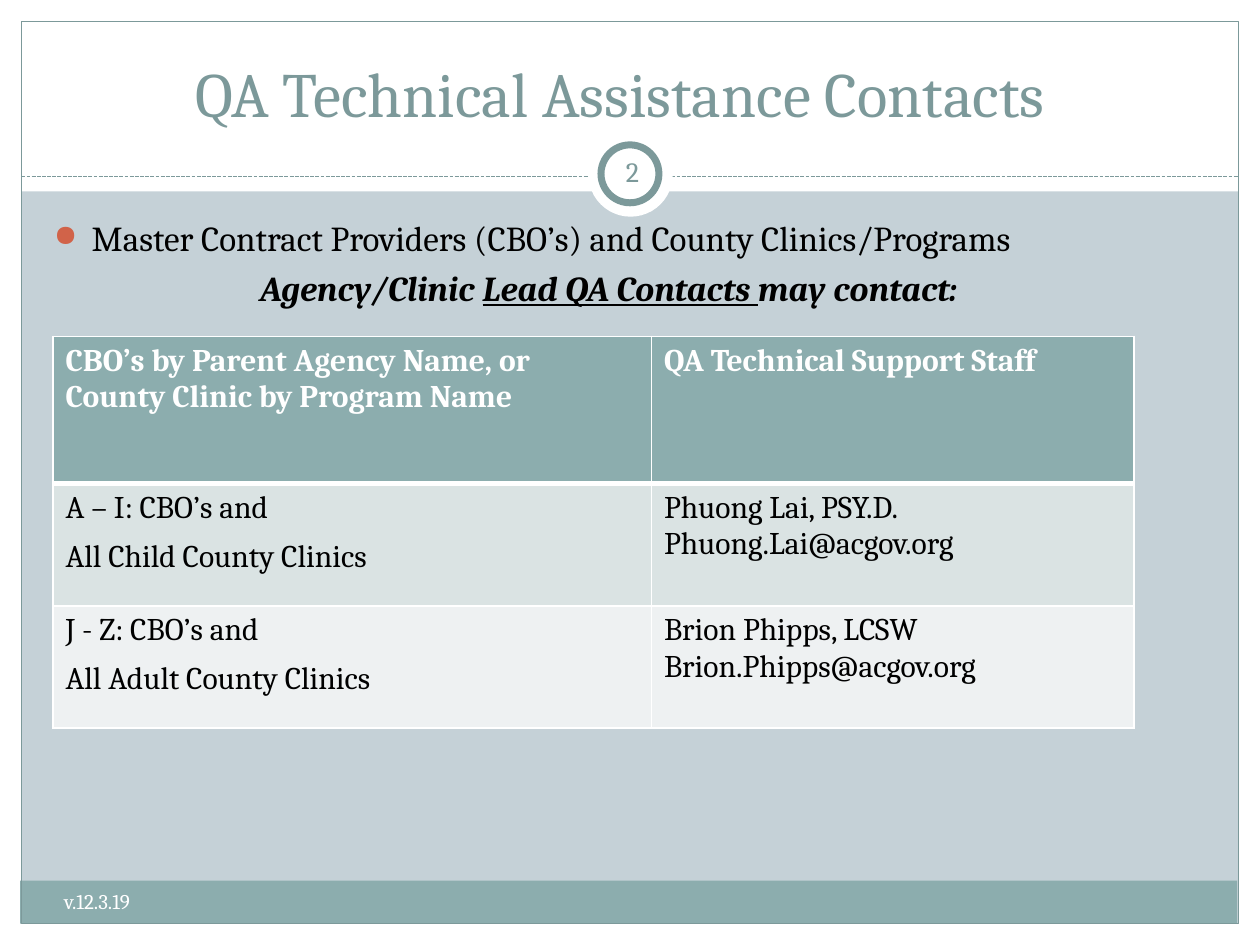
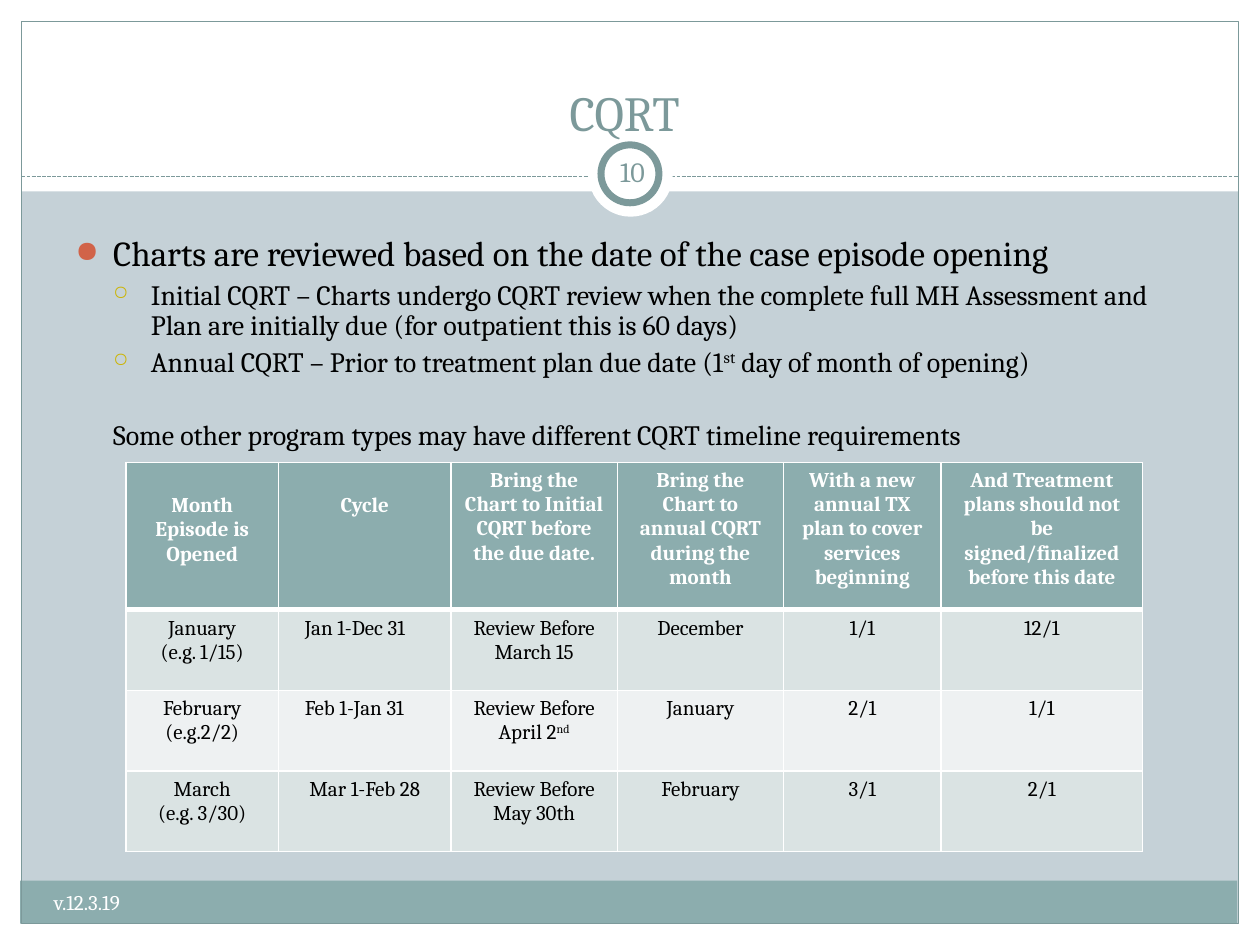
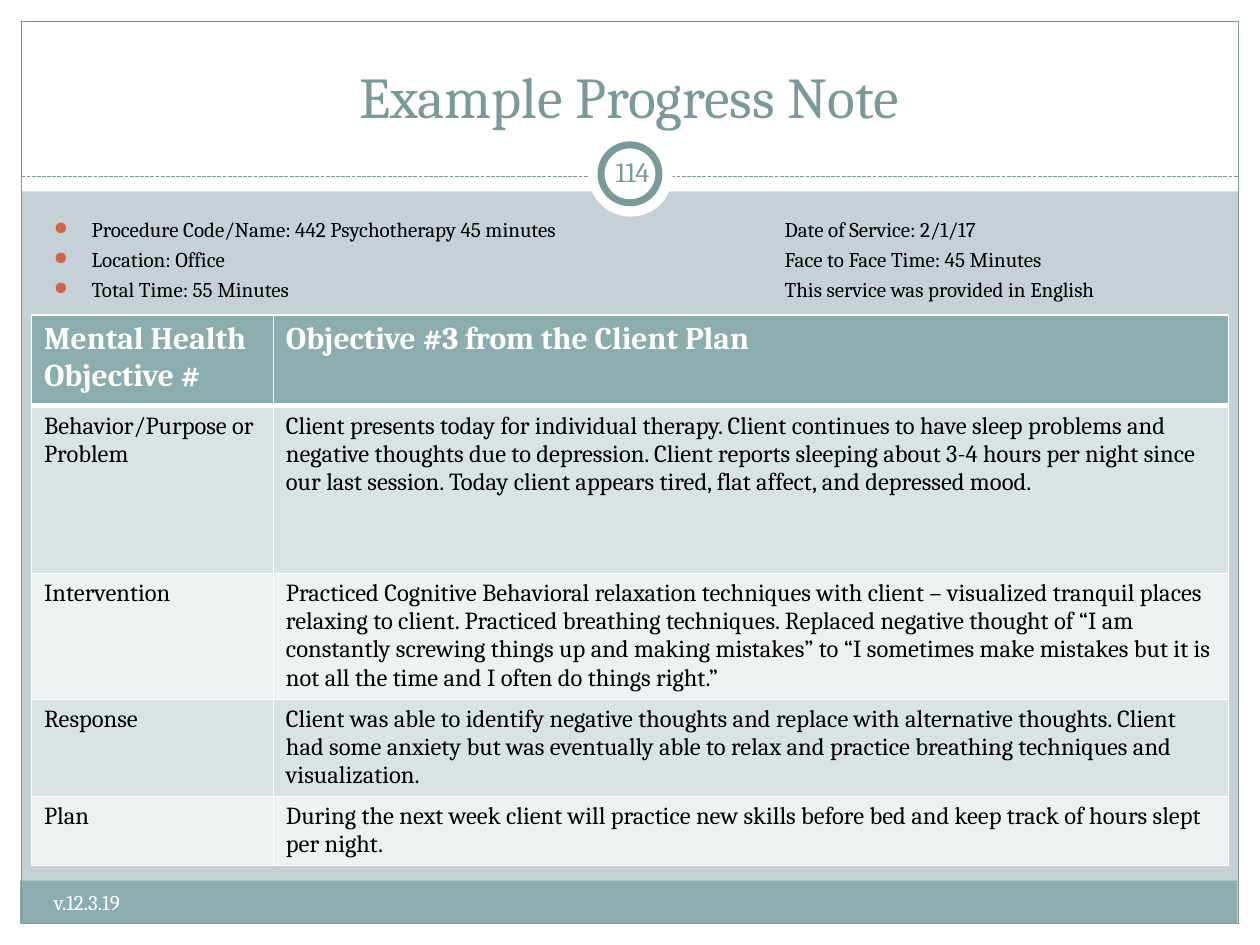
"""Build three slides of a quality assurance training presentation."""
from dataclasses import dataclass

from lxml import etree
from pptx import Presentation
from pptx.dml.color import RGBColor
from pptx.enum.dml import MSO_LINE
from pptx.enum.shapes import MSO_CONNECTOR, MSO_SHAPE
from pptx.enum.text import MSO_ANCHOR, MSO_AUTO_SIZE, PP_ALIGN
from pptx.oxml.ns import qn
from pptx.util import Inches, Pt

RECTANGLE, OVAL = MSO_SHAPE.RECTANGLE, MSO_SHAPE.OVAL
STRAIGHT, DASHED = MSO_CONNECTOR.STRAIGHT, MSO_LINE.SQUARE_DOT
LEFT, CENTER = PP_ALIGN.LEFT, PP_ALIGN.CENTER
TOP, MIDDLE, BOTTOM = MSO_ANCHOR.TOP, MSO_ANCHOR.MIDDLE, MSO_ANCHOR.BOTTOM
NO_AUTOFIT = MSO_AUTO_SIZE.NONE
FONT = "Cambria"
SPACE_RATIO = 0.23
TITLE_ONLY = 5
COLORS = {
    "background": "C5D1D7",
    "white": "FFFFFF",
    "black": "000000",
    "band": "8CADAE",
    "accent": "7C999A",
    "odd_row": "DAE3E3",
    "even_row": "EEF1F2",
    "bullet": "D16349",
    "sub_bullet": "CCB400",
}


@dataclass(frozen=True)
class Box:
    """A position and size in inches."""

    left: float
    top: float
    width: float
    height: float

    def lengths(self) -> tuple:
        """Return the four measures as lengths."""
        return tuple(Inches(v) for v in (self.left, self.top, self.width, self.height))


@dataclass(frozen=True)
class FramePart:
    """A preset shape of the shared frame."""

    box: Box
    kind: int = RECTANGLE
    fill: str = ""
    line_width: float = 0


@dataclass(frozen=True)
class Run:
    """A piece of text with its own formatting."""

    text: str
    emphasis: bool = False
    underline: bool = False
    superscript: bool = False


@dataclass(frozen=True)
class Bullet:
    """A bullet character with colour, size and indent."""

    character: str
    color: str
    percent: int
    margin: float


@dataclass(frozen=True)
class Paragraph:
    """A paragraph made of runs."""

    runs: tuple[Run, ...]
    size: float
    align: int = LEFT
    bullet: Bullet | None = None
    margin: float = 0
    space_before: float = 0
    line_spacing: float = 1.0
    tab: float = 0


@dataclass(frozen=True)
class Cell:
    """The paragraphs of a table cell and its top margin."""

    paragraphs: tuple[Paragraph, ...]
    top_margin: float = 0.05


@dataclass(frozen=True)
class TableData:
    """A table with its measures in inches."""

    box: Box
    columns: tuple[float, ...]
    rows: tuple[float, ...]
    cells: tuple[tuple[Cell, ...], ...]


@dataclass(frozen=True)
class SlideData:
    """Everything that differs from slide to slide."""

    title: str
    title_size: float
    title_box: Box
    number: str
    body_box: Box
    body: tuple[Paragraph, ...]
    table: TableData
    footer_box: Box = Box(0.33, 7.01, 3.92, 0.4)


FOOTER = "v.12.3.19"
NUMBER_BOX = Box(4.77, 1.12, 0.5, 0.48)
DIVIDER = (0.17, 1.4, 9.83, 1.4)
FRAME_BACK = (
    FramePart(Box(0, 7.33, 10, 0.17), fill="white"),
    FramePart(Box(0, 0, 10, 1.52), fill="white"),
    FramePart(Box(0, 0, 0.17, 7.5), fill="white"),
    FramePart(Box(9.83, 0, 0.17, 7.5), fill="white"),
    FramePart(Box(0.16, 6.99, 9.66, 0.34), fill="band"),
    FramePart(Box(0.17, 0.17, 9.66, 7.16), line_width=0.75),
)
NUMBER_BADGE = (
    FramePart(Box(4.67, 1.05, 0.67, 0.67), OVAL, "white"),
    FramePart(Box(4.77, 1.15, 0.46, 0.46), OVAL, "white", 4),
)
MAIN_BULLET = Bullet("●", "bullet", 85, 0.3)
SUB_BULLET = Bullet("○", "sub_bullet", 70, 0.6)


def body_line(*runs: Run, size: float, bullet: Bullet | None = MAIN_BULLET, **options) -> Paragraph:
    """Describe a body paragraph with spacing in proportion to its size."""
    settings = {"space_before": round(size * SPACE_RATIO, 1), **options}
    return Paragraph(runs, size, bullet=bullet, **settings)


def cell(*lines: str, size: float, align: int = LEFT, gap: float = 0,
         margin: float = 0, top_margin: float = 0.05) -> Cell:
    """Describe a cell with one plain paragraph for each line."""
    return Cell(tuple(
        Paragraph((Run(line),), size, align, margin=margin, space_before=gap if index else 0)
        for index, line in enumerate(lines)
    ), top_margin)


def centered(*lines: str, **options) -> Cell:
    """Describe a centred cell of the review schedule."""
    return cell(*lines, size=12, align=CENTER, **options)


def schedule_row(month: str, example: str, cycle: Cell, review: Cell, *dates: str) -> tuple[Cell, ...]:
    """Describe one month of the review schedule."""
    return (centered(month, example), cycle, review, *(centered(date) for date in dates))


def note_row(label: str, text: str, size: float = 14) -> tuple[Cell, ...]:
    """Describe one row of the progress note."""
    return cell(label, size=size), cell(text, size=size)


CONTACTS = TableData(
    Box(0.42, 2.67, 8.58, 3.11), (4.75, 3.83), (1.17, 0.97, 0.97),
    (
        (cell("CBO’s by Parent Agency Name, or", "County Clinic by Program Name", size=18),
         cell("QA Technical Support Staff", size=18)),
        (cell("A – I: CBO’s and", "All Child County Clinics", size=18, gap=7),
         cell("Phuong Lai, PSY.D.", "Phuong.Lai@acgov.org", size=18)),
        (cell("J - Z: CBO’s and", "All Adult County Clinics", size=18, gap=7),
         cell("Brion Phipps, LCSW", "Brion.Phipps@acgov.org", size=18)),
    ),
)
SCHEDULE = TableData(
    Box(1, 3.67, 8.07, 3.09), (1.21, 1.37, 1.32, 1.32, 1.25, 1.6), (1.17, 0.64, 0.64, 0.64),
    (
        (centered("Month Episode is Opened", top_margin=0.25),
         centered("Cycle", top_margin=0.25),
         centered("Bring the Chart to Initial CQRT before the due date."),
         centered("Bring the Chart to annual CQRT during the month"),
         centered("With a new annual TX plan to cover services beginning"),
         centered("And Treatment plans should not be signed/finalized before this date")),
        schedule_row("January", "(e.g. 1/15)", cell("Jan 1-Dec 31", size=12, margin=0.11),
                     centered("Review Before March 15"), "December", "1/1", "12/1"),
        schedule_row("February", "(e.g.2/2)", cell("Feb 1-Jan 31", size=12, margin=0.11),
                     Cell((Paragraph((Run("Review Before April 2"), Run("nd", superscript=True)),
                                     12, CENTER),)),
                     "January", "2/1", "1/1"),
        schedule_row("March", "(e.g. 3/30)", centered("Mar 1-Feb 28"),
                     centered("Review Before May 30th"), "February", "3/1", "2/1"),
    ),
)
PROGRESS_NOTE = TableData(
    Box(0.25, 2.5, 9.5, 4.36), (1.92, 7.58), (0.72, 1.33, 1, 0.77, 0.54),
    (
        note_row("Mental Health Objective #", "Objective #3 from the Client Plan", 18),
        note_row("Behavior/Purpose or Problem",
                 "Client presents today for individual therapy. Client continues to have sleep "
                 "problems and negative thoughts due to depression. Client reports sleeping about "
                 "3-4 hours per night since our last session. Today client appears tired, flat "
                 "affect, and depressed mood."),
        note_row("Intervention",
                 "Practiced Cognitive Behavioral relaxation techniques with client – visualized "
                 "tranquil places relaxing to client. Practiced breathing techniques. Replaced "
                 "negative thought of “I am constantly screwing things up and making mistakes” to "
                 "“I sometimes make mistakes but it is not all the time and I often do things right.”"),
        note_row("Response",
                 "Client was able to identify negative thoughts and replace with alternative "
                 "thoughts. Client had some anxiety but was eventually able to relax and practice "
                 "breathing techniques and visualization."),
        note_row("Plan",
                 "During the next week client will practice new skills before bed and keep track "
                 "of hours slept per night."),
    ),
)
SERVICE_DETAILS = (
    ("Procedure Code/Name: 442 Psychotherapy 45 minutes", "Date of Service: 2/1/17"),
    ("Location: Office", "Face to Face Time: 45 Minutes"),
    ("Total Time: 55 Minutes", "This service was provided in English"),
)
SLIDES = (
    SlideData(
        "QA Technical Assistance Contacts", 36, Box(0.42, 0.33, 9, 0.75), "2",
        Box(0.33, 1.67, 9, 5.17),
        (
            body_line(Run("Master Contract Providers (CBO’s) and County Clinics/Programs"), size=20),
            body_line(Run("Agency/Clinic ", True), Run("Lead QA Contacts ", True, True),
                      Run("may contact:", True), size=20, bullet=None, align=CENTER),
        ),
        CONTACTS, Box(0.41, 7, 3.92, 0.4),
    ),
    SlideData(
        "CQRT ", 28, Box(0.5, 0.25, 9, 0.92), "10", Box(0.5, 1.83, 9, 5),
        (
            body_line(Run("Charts are reviewed based on the date of the case episode opening"),
                      size=20, line_spacing=0.9),
            body_line(Run("Initial CQRT – Charts undergo CQRT review when the complete full MH "
                          "Assessment and Plan are initially due (for outpatient this is 60 days)"),
                      size=16, bullet=SUB_BULLET, line_spacing=0.9),
            body_line(Run("Annual CQRT – Prior to treatment plan due date (1"),
                      Run("st", superscript=True), Run(" day of month of opening)"),
                      size=16, bullet=SUB_BULLET, line_spacing=0.9),
            body_line(Run("Some other program types may have different CQRT timeline requirements"),
                      size=16, bullet=None, margin=0.3, space_before=24.5, line_spacing=0.9),
        ),
        SCHEDULE,
    ),
    SlideData(
        "Example Progress Note", 33, Box(0.33, 0.25, 9.33, 0.83), "114", Box(0.33, 1.67, 9.3, 5),
        tuple(body_line(Run(f"{left}\t{right}"), size=12, tab=5.8)
              for left, right in SERVICE_DETAILS),
        PROGRESS_NOTE,
    ),
)


def color(name: str) -> RGBColor:
    """Return a colour of the palette."""
    return RGBColor.from_string(COLORS[name])


def add_element(parent, tag: str, **attributes):
    """Append a drawing element with attributes."""
    return etree.SubElement(parent, qn(tag), {key: str(value) for key, value in attributes.items()})


def write_paragraph(paragraph, data: Paragraph, color_name: str, bold: bool = False) -> None:
    """Write and format a paragraph run by run."""
    paragraph.alignment = data.align
    paragraph.line_spacing = data.line_spacing
    paragraph.space_before = Pt(data.space_before)
    properties = paragraph._p.get_or_add_pPr()
    margin = data.bullet.margin if data.bullet else data.margin
    properties.set("marL", str(Inches(margin)))
    properties.set("indent", str(Inches(-0.3 if data.bullet else 0)))
    if data.bullet:
        bullet_color = add_element(properties, "a:buClr")
        add_element(bullet_color, "a:srgbClr", val=COLORS[data.bullet.color])
        add_element(properties, "a:buSzPct", val=data.bullet.percent * 1000)
        add_element(properties, "a:buChar", char=data.bullet.character)
    else:
        add_element(properties, "a:buNone")
    if data.tab:
        add_element(add_element(properties, "a:tabLst"), "a:tab", pos=Inches(data.tab), algn="l")
    for item in data.runs:
        run = paragraph.add_run()
        run.text = item.text
        run.font.name = FONT
        run.font.size = Pt(data.size)
        run.font.color.rgb = color(color_name)
        run.font.bold = bold or item.emphasis
        run.font.italic = item.emphasis
        run.font.underline = item.underline
        if item.superscript:
            run._r.get_or_add_rPr().set("baseline", "30000")


def write_text(frame, paragraphs: tuple[Paragraph, ...], color_name: str, bold: bool = False) -> None:
    """Fill a text frame with paragraphs."""
    for index, data in enumerate(paragraphs):
        paragraph = frame.add_paragraph() if index else frame.paragraphs[0]
        write_paragraph(paragraph, data, color_name, bold)


def format_frame(frame, anchor: int, side_inset: float = 0.1) -> None:
    """Set wrapping, anchor and insets of a text frame."""
    frame.word_wrap = True
    frame.auto_size = NO_AUTOFIT
    frame.vertical_anchor = anchor
    frame.margin_left = frame.margin_right = Inches(side_inset)
    frame.margin_top = frame.margin_bottom = Inches(0.05)


def add_text(slide, box: Box, paragraphs: tuple[Paragraph, ...], color_name: str,
             anchor: int = TOP, side_inset: float = 0.1) -> None:
    """Add a text box."""
    frame = slide.shapes.add_textbox(*box.lengths()).text_frame
    format_frame(frame, anchor, side_inset)
    write_text(frame, paragraphs, color_name)


def add_frame_part(slide, part: FramePart):
    """Add one shape of the shared frame."""
    shape = slide.shapes.add_shape(part.kind, *part.box.lengths())
    shape.shadow.inherit = False
    if part.fill:
        shape.fill.solid()
        shape.fill.fore_color.rgb = color(part.fill)
    else:
        shape.fill.background()
    if part.line_width:
        shape.line.color.rgb = color("accent")
        shape.line.width = Pt(part.line_width)
    else:
        shape.line.fill.background()
    return shape


def add_divider(slide):
    """Add the dashed line below the title."""
    divider = slide.shapes.add_connector(STRAIGHT, *(Inches(value) for value in DIVIDER))
    divider.line.color.rgb = color("accent")
    divider.line.width = Pt(0.75)
    divider.line.dash_style = DASHED
    add_element(divider.element.spPr, "a:effectLst")
    return divider


def move_frame_to_layout(slide, layout) -> None:
    """Draw the shared frame and place it on the layout."""
    layout.background.fill.solid()
    layout.background.fill.fore_color.rgb = color("background")
    parts = [add_frame_part(slide, part) for part in FRAME_BACK]
    parts.append(add_divider(slide))
    parts.extend(add_frame_part(slide, part) for part in NUMBER_BADGE)
    for part in parts:
        layout.shapes.element.append(part.element)


def add_borders(table_cell, row: int) -> None:
    """Give a cell white borders, thicker below the header."""
    properties = table_cell._tc.get_or_add_tcPr()
    widths = {"L": 1, "R": 1, "T": 3 if row == 1 else 1, "B": 3 if row == 0 else 1}
    for side, width in widths.items():
        border = add_element(properties, f"a:ln{side}", w=Pt(width))
        add_element(add_element(border, "a:solidFill"), "a:srgbClr", val=COLORS["white"])


def add_data_table(slide, data: TableData) -> None:
    """Add a table with a header row and alternating row fills."""
    table = slide.shapes.add_table(len(data.rows), len(data.columns), *data.box.lengths()).table
    for column, width in zip(table.columns, data.columns):
        column.width = Inches(width)
    for row, (height, cells) in enumerate(zip(data.rows, data.cells)):
        table.rows[row].height = Inches(height)
        is_header = row == 0
        fill = "band" if is_header else "odd_row" if row % 2 else "even_row"
        for column, content in enumerate(cells):
            table_cell = table.cell(row, column)
            add_borders(table_cell, row)
            table_cell.fill.solid()
            table_cell.fill.fore_color.rgb = color(fill)
            table_cell.margin_top = Inches(content.top_margin)
            write_text(table_cell.text_frame, content.paragraphs,
                       "white" if is_header else "black", is_header)


def fill_slide(slide, data: SlideData) -> None:
    """Write the title, body, number, table and footer of a slide."""
    title = slide.shapes.title
    title.left, title.top, title.width, title.height = data.title_box.lengths()
    format_frame(title.text_frame, BOTTOM)
    write_text(title.text_frame, (Paragraph((Run(data.title),), data.title_size, CENTER),), "accent")
    add_text(slide, data.body_box, data.body, "black")
    add_text(slide, NUMBER_BOX, (Paragraph((Run(data.number),), 16, CENTER),), "accent", MIDDLE, 0.05)
    add_data_table(slide, data.table)
    add_text(slide, data.footer_box, (Paragraph((Run(FOOTER),), 12),), "white")


def main() -> None:
    """Build and save the presentation."""
    presentation = Presentation()
    presentation.slide_width, presentation.slide_height = Inches(10), Inches(7.5)
    layout = presentation.slide_layouts[TITLE_ONLY]
    for index, data in enumerate(SLIDES):
        slide = presentation.slides.add_slide(layout)
        if index == 0:
            move_frame_to_layout(slide, layout)
        fill_slide(slide, data)
    presentation.save("out.pptx")


if __name__ == "__main__":
    main()
